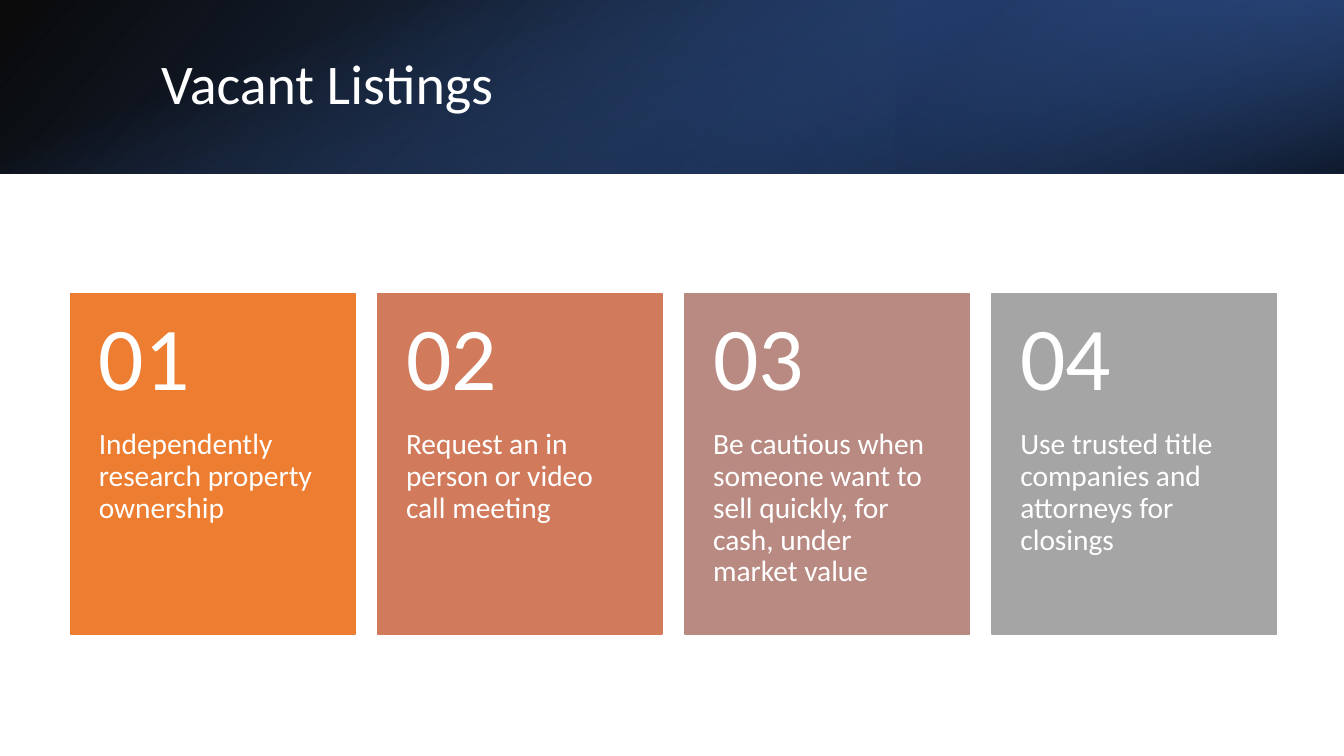
from dataclasses import dataclass

from lxml.etree import SubElement
from pptx import Presentation
from pptx.dml.color import RGBColor
from pptx.enum.shapes import MSO_SHAPE
from pptx.enum.text import MSO_ANCHOR
from pptx.oxml.ns import qn
from pptx.util import Inches, Pt


@dataclass(frozen=True)
class Theme:
    """Colours, font and type sizes of the slide."""
    font: str = "Calibri"
    text: str = "FFFFFF"
    black: str = "000000"
    band_blue: str = "2F5597"
    deep_blue: str = "203864"
    bright_blue: str = "4472C4"
    cards: tuple = ("ED7D31", "D17B5C", "B98A82", "A5A5A5")
    title_size: int = 40
    number_size: int = 64
    body_size: int = 21


THEME = Theme()
STEPS = (
    "Independently research property ownership",
    "Request an in person or video call meeting",
    "Be cautious when someone want to sell quickly, for cash, under market value",
    "Use trusted title companies and attorneys for closings",
)


def add_text(slide, text, box, *, size, anchor=MSO_ANCHOR.TOP,
             insets=(0.1, 0.05, 0.1, 0.05), space_after=0):
    """Add a one-paragraph text box; space_after is a percentage of a line."""
    frame = slide.shapes.add_textbox(*map(Inches, box)).text_frame
    frame.word_wrap = True
    frame.vertical_anchor = anchor
    (frame.margin_left, frame.margin_top,
     frame.margin_right, frame.margin_bottom) = map(Inches, insets)
    paragraph = frame.paragraphs[0]
    paragraph.line_spacing = 0.9
    if space_after:
        spacing = SubElement(paragraph._p.get_or_add_pPr(), qn("a:spcAft"))
        SubElement(spacing, qn("a:spcPct")).set("val", str(space_after * 1000))
    run = paragraph.add_run()
    run.text = text
    run.font.name = THEME.font
    run.font.size = Pt(size)
    run.font.color.rgb = RGBColor.from_string(THEME.text)


def add_rectangle(slide, box):
    """Add a rectangle without a shadow."""
    shape = slide.shapes.add_shape(MSO_SHAPE.RECTANGLE, *map(Inches, box))
    shape.shadow.inherit = False
    return shape


def add_gradient(slide, box, stops, angle, rotation=0, flipped=False):
    """Add a gradient rectangle; stops are (percent, colour, opacity percent)."""
    shape = add_rectangle(slide, box)
    shape.line.fill.background()
    shape.rotation = rotation
    if flipped:
        shape._element.spPr.xfrm.set("flipH", "1")
    shape.fill.gradient()
    shape.fill.gradient_angle = 360 - angle
    for stop, (position, color, _) in zip(shape.fill.gradient_stops, stops):
        stop.position = position / 100
        stop.color.rgb = RGBColor.from_string(color)
    colors = shape._element.spPr.iter(qn("a:srgbClr"))
    for color, (_, _, opacity) in zip(list(colors), stops):
        SubElement(color, qn("a:alpha")).set("val", str(opacity * 1000))


def add_header(slide, title, box):
    """Layer three gradients into the header band and add the title."""
    left, top, width, height = box
    add_gradient(slide, box,
                 ((0, THEME.black, 96), (100, THEME.band_blue, 100)),
                 140, flipped=True)
    add_gradient(slide, (left + width * 2 / 3, top, width / 3, height),
                 ((19, THEME.deep_blue, 68), (100, THEME.bright_blue, 79)),
                 320, rotation=180, flipped=True)
    shift = (width - height) / 2
    add_gradient(slide, (left + shift, top - shift, height, width),
                 ((23, THEME.bright_blue, 0), (99, THEME.black, 74)),
                 340, rotation=90)
    add_text(slide, title, (left + 1.5, top + 0.38, 10.98, 0.96),
             size=THEME.title_size, anchor=MSO_ANCHOR.MIDDLE)


def add_card(slide, number, text, color, box):
    """Add a coloured card with its number above its text."""
    left, top, width, height = box
    number_height = height * 0.4
    card = add_rectangle(slide, box)
    card.fill.solid()
    card.fill.fore_color.rgb = RGBColor.from_string(color)
    card.line.color.rgb = RGBColor.from_string(color)
    card.line.width = Pt(1)
    add_text(slide, text,
             (left, top + number_height, width, height - number_height),
             size=THEME.body_size, insets=(0.28, 0, 0.28, 0.36), space_after=35)
    add_text(slide, f"{number:02d}", (left, top, width, number_height),
             size=THEME.number_size, anchor=MSO_ANCHOR.MIDDLE,
             insets=(0.28, 0.18, 0.28, 0.18), space_after=35)


def add_cards(slide, box, card_width=2.82):
    """Spread the cards evenly across the box."""
    left, top, width, height = box
    pitch = (width - card_width) / (len(STEPS) - 1)
    for index, (text, color) in enumerate(zip(STEPS, THEME.cards)):
        add_card(slide, index + 1, text, color,
                 (left + index * pitch, top, card_width, height))


def main():
    """Build and save the slide."""
    presentation = Presentation()
    presentation.slide_width = Inches(13.33)
    presentation.slide_height = Inches(7.5)
    slide = presentation.slides.add_slide(presentation.slide_layouts[6])
    add_header(slide, "Vacant Listings", (0, 0, 13.33, 1.72))
    add_cards(slide, (0.7, 2.91, 11.96, 3.38))
    presentation.save("out.pptx")


if __name__ == "__main__":
    main()
